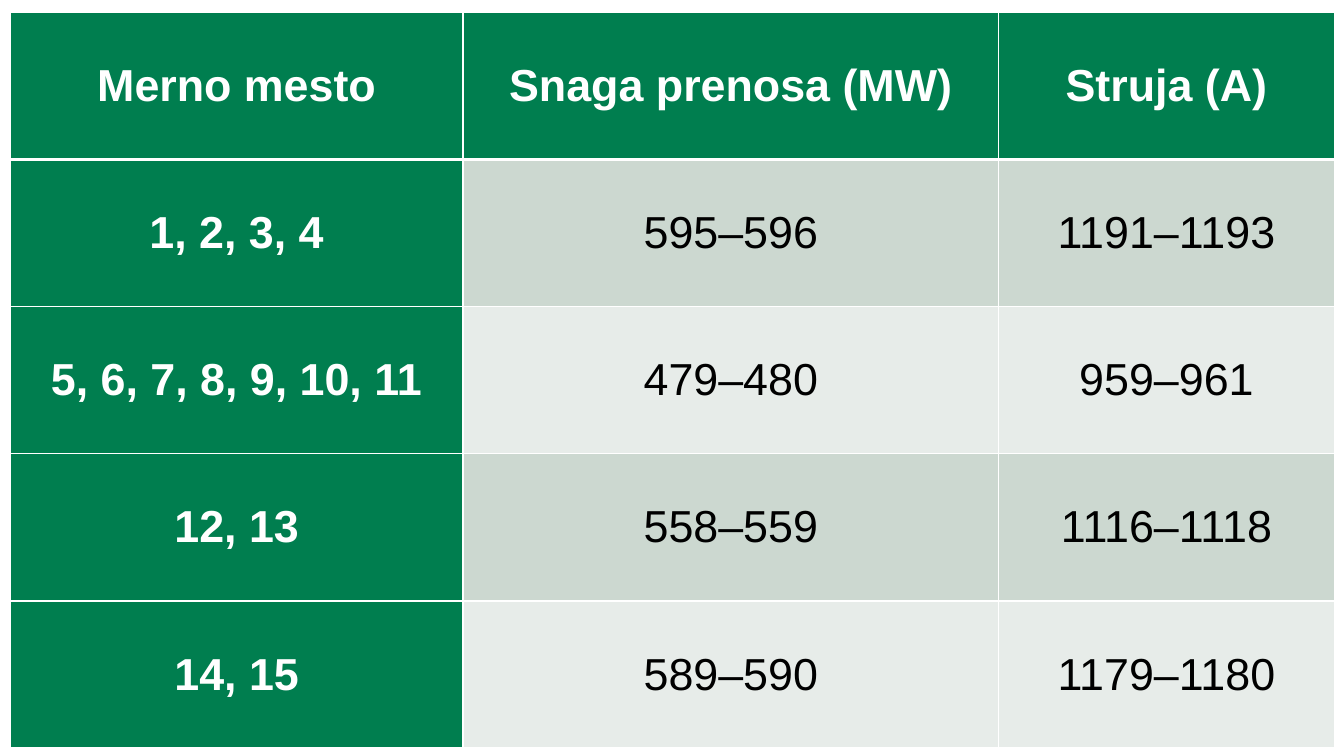
"""Build a slide with a table of transmission power and current by measuring point."""
from dataclasses import dataclass

from lxml.etree import SubElement
from pptx import Presentation
from pptx.dml.color import RGBColor
from pptx.enum.text import MSO_ANCHOR, PP_ALIGN
from pptx.oxml.ns import qn
from pptx.table import _Cell
from pptx.util import Pt

COLORS = {
    "green": "007E4F",
    "dark band": "CCD8D0",
    "light band": "E7ECE9",
    "white": "FFFFFF",
    "black": "000000",
}
COLUMN_WIDTHS = (323.2, 382.8, 239.5)
ROW_HEIGHT = 105.1
TABLE_LEFT, TABLE_TOP = 7.5, 8.9
CELL_MARGIN = 1.5
THIN_LINE, HEADER_LINE = 1, 3


@dataclass(frozen=True)
class Measurement:
    """One row of the table."""

    place: str
    power: str
    current: str


@dataclass(frozen=True)
class CellStyle:
    """Look of one table cell."""

    fill: str
    text: str
    bold: bool
    top_line: float = THIN_LINE
    bottom_line: float = THIN_LINE


ROWS = (
    Measurement("Merno mesto", "Snaga prenosa (MW)", "Struja (A)"),
    Measurement("1, 2, 3, 4", "595–596", "1191–1193"),
    Measurement("5, 6, 7, 8, 9, 10, 11", "479–480", "959–961"),
    Measurement("12, 13", "558–559", "1116–1118"),
    Measurement("14, 15", "589–590", "1179–1180"),
)


def color(name: str) -> RGBColor:
    """Return the named colour."""
    return RGBColor.from_string(COLORS[name])


def choose_style(row: int, column: int) -> CellStyle:
    """Return the style for a header, first-column or banded cell."""
    top_line = HEADER_LINE if row == 1 else THIN_LINE
    bottom_line = HEADER_LINE if row == 0 else THIN_LINE
    if row == 0 or column == 0:
        return CellStyle("green", "white", True, top_line, bottom_line)
    band = "dark band" if row % 2 else "light band"
    return CellStyle(band, "black", False, top_line, bottom_line)


def add_borders(cell: _Cell, style: CellStyle) -> None:
    """Draw white lines on the four sides of a cell."""
    properties = cell._tc.get_or_add_tcPr()
    widths = {"L": THIN_LINE, "R": THIN_LINE, "T": style.top_line, "B": style.bottom_line}
    for side, width in widths.items():
        line = SubElement(properties, qn(f"a:ln{side}"), w=str(Pt(width)))
        fill = SubElement(line, qn("a:solidFill"))
        SubElement(fill, qn("a:srgbClr"), val=COLORS["white"])


def fill_cell(cell: _Cell, text: str, style: CellStyle) -> None:
    """Write and format one cell."""
    add_borders(cell, style)
    cell.fill.solid()
    cell.fill.fore_color.rgb = color(style.fill)
    cell.margin_left = cell.margin_right = Pt(CELL_MARGIN)
    cell.margin_top = cell.margin_bottom = Pt(CELL_MARGIN)
    cell.vertical_anchor = MSO_ANCHOR.MIDDLE
    paragraph = cell.text_frame.paragraphs[0]
    paragraph.text = text
    paragraph.alignment = PP_ALIGN.CENTER
    font = paragraph.runs[0].font
    font.name = "Arial"
    font.size = Pt(32)
    font.bold = style.bold
    font.color.rgb = color(style.text)


def main() -> None:
    """Create the presentation and save it."""
    presentation = Presentation()
    presentation.slide_width = Pt(960)
    presentation.slide_height = Pt(540)
    slide = presentation.slides.add_slide(presentation.slide_layouts[6])
    table = slide.shapes.add_table(
        len(ROWS),
        len(COLUMN_WIDTHS),
        Pt(TABLE_LEFT),
        Pt(TABLE_TOP),
        Pt(sum(COLUMN_WIDTHS)),
        Pt(ROW_HEIGHT * len(ROWS)),
    ).table
    table.first_col = True
    for column, width in zip(table.columns, COLUMN_WIDTHS):
        column.width = Pt(width)
    for row_index, measurement in enumerate(ROWS):
        table.rows[row_index].height = Pt(ROW_HEIGHT)
        texts = (measurement.place, measurement.power, measurement.current)
        for column_index, text in enumerate(texts):
            style = choose_style(row_index, column_index)
            fill_cell(table.cell(row_index, column_index), text, style)
    presentation.save("out.pptx")


if __name__ == "__main__":
    main()
